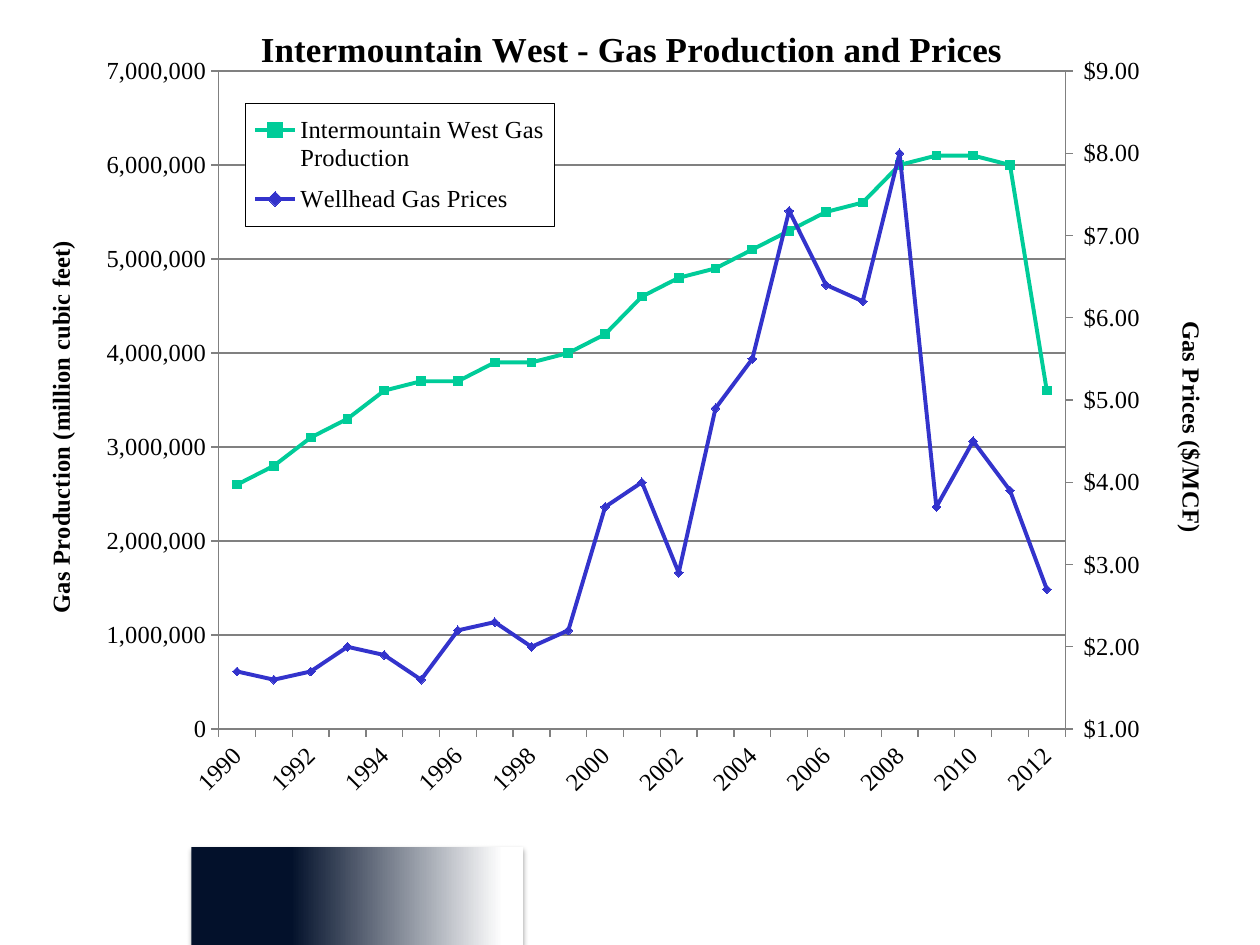
"""Build a slide with a two-axis line chart of gas production and prices."""
from copy import deepcopy
from dataclasses import dataclass

from lxml.etree import SubElement
from pptx import Presentation
from pptx.chart.axis import CategoryAxis, ValueAxis
from pptx.chart.data import CategoryChartData
from pptx.dml.color import RGBColor
from pptx.enum.chart import XL_CHART_TYPE, XL_LEGEND_POSITION, XL_MARKER_STYLE, XL_TICK_MARK
from pptx.enum.shapes import MSO_SHAPE
from pptx.oxml import parse_xml
from pptx.oxml.ns import nsdecls, qn
from pptx.util import Inches, Pt

FONT = "Times New Roman"
BLACK, GRAY, WHITE, NAVY = "000000", "808080", "FFFFFF", "03112B"


@dataclass
class Line:
    name: str
    color: str
    marker: int
    values: list[float]


@dataclass
class AxisStyle:
    title: str
    rotation: int
    title_place: tuple[float, float]
    minimum: float
    maximum: float
    step: float
    number_format: str


PRODUCTION = Line("Intermountain West Gas Production", "00CC99", XL_MARKER_STYLE.SQUARE, [
    amount * 100000 for amount in (
        26, 28, 31, 33, 36, 37, 37, 39, 39, 40, 42, 46,
        48, 49, 51, 53, 55, 56, 60, 61, 61, 60, 36)])
PRICES = Line("Wellhead Gas Prices", "3333CC", XL_MARKER_STYLE.DIAMOND, [
    1.7, 1.6, 1.7, 2, 1.9, 1.6, 2.2, 2.3, 2, 2.2, 3.7, 4,
    2.9, 4.9, 5.5, 7.3, 6.4, 6.2, 8, 3.7, 4.5, 3.9, 2.7])
LINES = [PRODUCTION, PRICES]
LEFT_AXIS = AxisStyle("Gas Production (million cubic feet)", -90, (0.3, 28.3),
                      0, 7000000, 1000000, "#,##0")
RIGHT_AXIS = AxisStyle("Gas Prices ($/MCF)", 90, (95.2, 37.9), 1, 9, 1, '_("$"#,##0.00_)')


def rgb(color: str) -> RGBColor:
    return RGBColor.from_string(color)


def style_font(font, size: float, bold: bool = False) -> None:
    font.name, font.size, font.bold = FONT, Pt(size), bold
    font.color.rgb = rgb(BLACK)


def chart_element(tag: str, value):
    return parse_xml(f'<c:{tag} {nsdecls("c")} val="{value}"/>')


def place(parent, left: float, top: float, width: float = 0, height: float = 0,
          inner: bool = False) -> None:
    """Give a chart part a manual layout in percent of the chart."""
    for old in parent.findall(qn("c:layout")):
        parent.remove(old)
    settings = [("layoutTarget", "inner")] if inner else []
    settings += [("xMode", "edge"), ("yMode", "edge"), ("x", left / 100), ("y", top / 100)]
    if width:
        settings += [("w", width / 100), ("h", height / 100)]
    layout = parse_xml(f'<c:layout {nsdecls("c")}><c:manualLayout/></c:layout>')
    for tag, value in settings:
        layout[0].append(chart_element(tag, value))
    first_tags = (qn("c:tx"), qn("c:legendPos"))
    parent.insert(sum(child.tag in first_tags for child in parent), layout)


def set_title(owner, text: str, size: float, position: tuple[float, float],
              rotation: int = 0) -> None:
    title = owner.axis_title if hasattr(owner, "axis_title") else owner.chart_title
    frame = title.text_frame
    frame.text = text
    style_font(frame.paragraphs[0].runs[0].font, size, True)
    title._element.find(".//" + qn("a:bodyPr")).set("rot", str(rotation * 60000))
    place(title._element, *position)


def style_axis(axis) -> None:
    axis.major_tick_mark = XL_TICK_MARK.OUTSIDE
    axis.minor_tick_mark = XL_TICK_MARK.NONE
    axis.format.line.color.rgb = rgb(GRAY)
    axis.format.line.width = Pt(0.75)
    style_font(axis.tick_labels.font, 14)


def style_value_axis(axis: ValueAxis, style: AxisStyle) -> None:
    style_axis(axis)
    axis.minimum_scale, axis.maximum_scale = style.minimum, style.maximum
    axis.major_unit = style.step
    axis.tick_labels.number_format = style.number_format
    axis.tick_labels.number_format_is_linked = False
    set_title(axis, style.title, 14, style.title_place, style.rotation)


def style_category_axis(axis: CategoryAxis) -> None:
    style_axis(axis)
    element = axis._element
    element.find(qn("c:txPr")).find(qn("a:bodyPr")).set("rot", str(-45 * 60000))
    last = element.find(qn("c:noMultiLvlLbl"))
    for tag, value in (("tickLblSkip", 2), ("tickMarkSkip", 1)):
        last.addprevious(chart_element(tag, value))


def style_series(series, line: Line) -> None:
    series.smooth = False
    series.format.line.color.rgb = rgb(line.color)
    series.format.line.width = Pt(2.25)
    series.marker.style, series.marker.size = line.marker, 5
    series.marker.format.fill.solid()
    series.marker.format.fill.fore_color.rgb = rgb(line.color)
    series.marker.format.line.color.rgb = rgb(line.color)


def add_second_axis(chart) -> ValueAxis:
    """Move the last series to a value axis on the right and return that axis."""
    plot = chart.plots[0]._element
    second_plot = deepcopy(plot)
    plot.remove(plot.findall(qn("c:ser"))[-1])
    second_plot.remove(second_plot.findall(qn("c:ser"))[0])
    plot.addnext(second_plot)
    value_element = chart.value_axis._element
    second_category = deepcopy(chart.category_axis._element)
    second_value = deepcopy(value_element)
    value_element.addnext(second_value)
    second_value.addnext(second_category)
    category_id, value_id = "5001", "5002"
    for element, own, other in ((second_category, category_id, value_id),
                                (second_value, value_id, category_id)):
        element.find(qn("c:axId")).set("val", own)
        element.find(qn("c:crossAx")).set("val", other)
    for reference, number in zip(second_plot.findall(qn("c:axId")), (category_id, value_id)):
        reference.set("val", number)
    second_value.find(qn("c:crosses")).set("val", "max")
    second_value.find(qn("c:axPos")).set("val", "r")
    CategoryAxis(second_category).visible = False
    axis = ValueAxis(second_value)
    axis.has_major_gridlines = False
    return axis


def add_gas_chart(slide) -> None:
    data = CategoryChartData()
    data.categories = [str(year) for year in range(1990, 2013)]
    for line in LINES:
        data.add_series(line.name, line.values)
    chart = slide.shapes.add_chart(XL_CHART_TYPE.LINE_MARKERS, Inches(0.29), Inches(0),
                                   Inches(9.45), Inches(6.63), data).chart
    style_font(chart.font, 10)
    chart.has_title = True
    set_title(chart, "Intermountain West - Gas Production and Prices", 20, (18.3, 2.5))
    chart.plots[0].vary_by_categories = False
    for series, line in zip(chart.plots[0].series, LINES):
        style_series(series, line)

    value_axis = chart.value_axis
    for old in value_axis._element.findall(qn("c:crossBetween")):
        value_axis._element.remove(old)
    value_axis._element.find(qn("c:crosses")).addnext(chart_element("crossBetween", "between"))
    value_axis.has_major_gridlines = True
    value_axis.major_gridlines.format.line.color.rgb = rgb(GRAY)
    value_axis.major_gridlines.format.line.width = Pt(0.75)
    right_axis = add_second_axis(chart)
    style_value_axis(value_axis, LEFT_AXIS)
    style_value_axis(right_axis, RIGHT_AXIS)
    style_category_axis(chart.category_axis)
    place(chart._chartSpace.chart.plotArea, 15.3, 8.5, 71.1, 78.8, inner=True)

    chart.has_legend = True
    legend = chart.legend
    legend.position = XL_LEGEND_POSITION.RIGHT
    legend.include_in_layout = True
    style_font(legend.font, 14)
    place(legend._element, 17.5, 12.3, 26, 14.8)
    legend._element.find(qn("c:txPr")).addprevious(parse_xml(
        f'<c:spPr {nsdecls("c", "a")}><a:solidFill><a:srgbClr val="{WHITE}"/></a:solidFill>'
        f'<a:ln w="3175"><a:solidFill><a:srgbClr val="{BLACK}"/></a:solidFill></a:ln></c:spPr>'))


def add_gradient_band(slide) -> None:
    band = slide.shapes.add_shape(MSO_SHAPE.RECTANGLE, Inches(1.52), Inches(6.72),
                                  Inches(2.63), Inches(0.78))
    band.fill.gradient()
    band.fill.gradient_angle = 0
    for stop, position, color in zip(band.fill.gradient_stops, (0.3, 0.94), (NAVY, WHITE)):
        stop.position, stop.color.rgb = position, rgb(color)
    band.line.fill.background()
    band.shadow.inherit = False
    shadow = SubElement(band._element.spPr.find(qn("a:effectLst")), qn("a:outerShdw"),
                        blurRad=str(Pt(3.1)), dist=str(Pt(1.8)), dir="5400000", rotWithShape="0")
    shade = SubElement(shadow, qn("a:srgbClr"), val=BLACK)
    SubElement(shade, qn("a:alpha"), val="35000")


def main() -> None:
    deck = Presentation()
    deck.slide_width, deck.slide_height = Inches(10), Inches(7.5)
    page = deck.slides.add_slide(deck.slide_layouts[6])
    add_gradient_band(page)
    add_gas_chart(page)
    deck.save("out.pptx")


if __name__ == "__main__":
    main()
